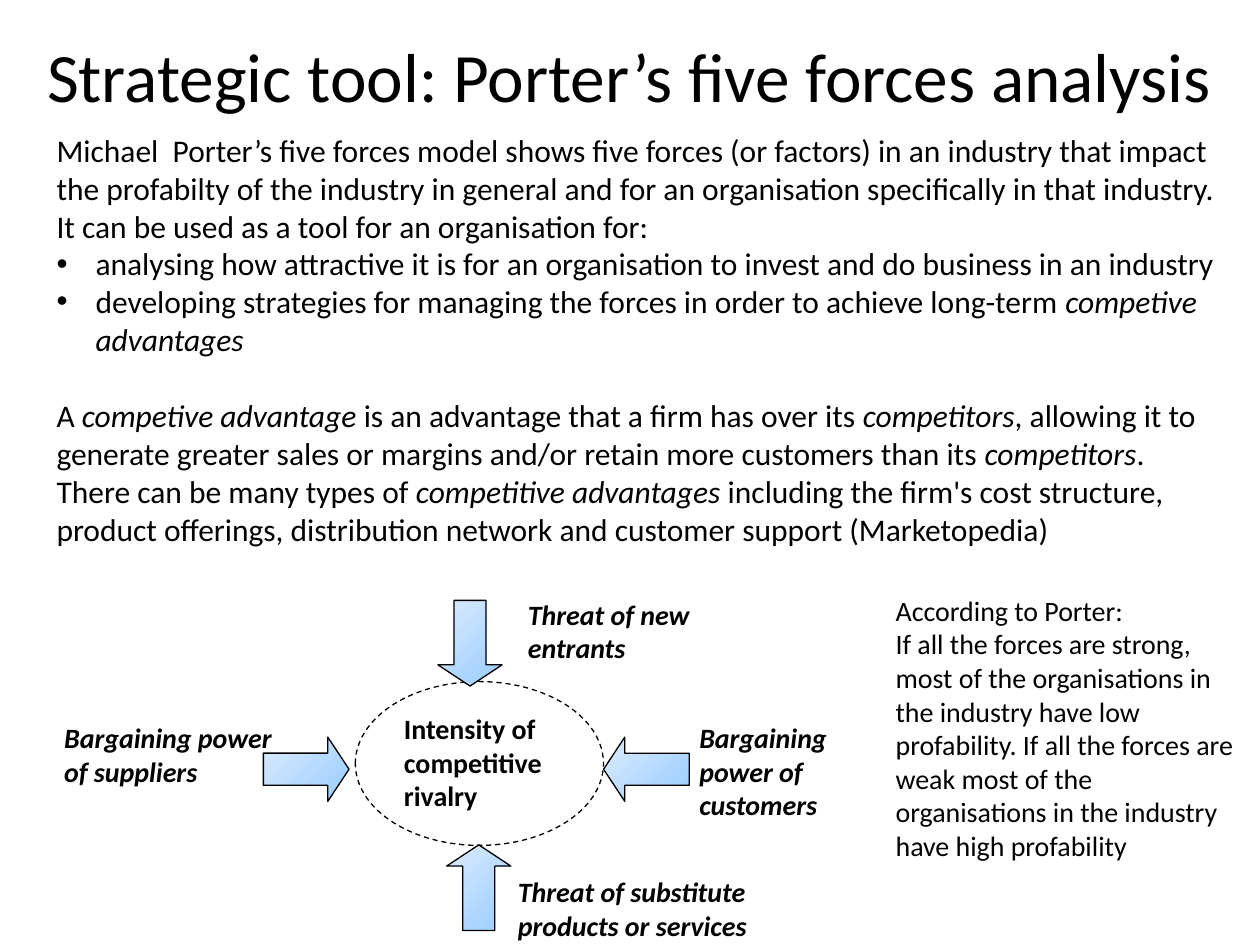
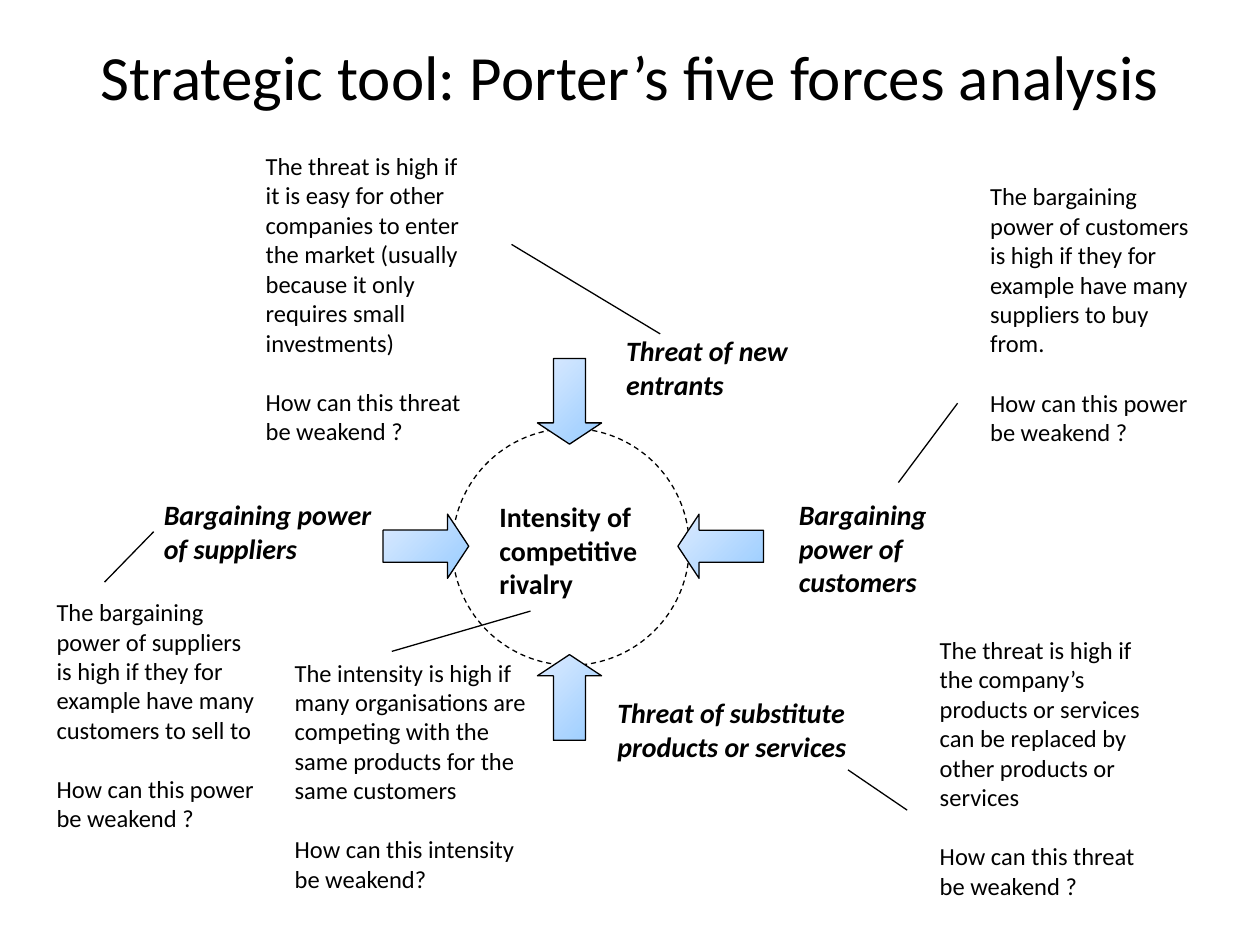
"""Build two slides on the five forces analysis."""
from lxml import etree
from pptx import Presentation
from pptx.dml.color import RGBColor
from pptx.enum.dml import MSO_LINE
from pptx.enum.shapes import MSO_CONNECTOR, MSO_SHAPE
from pptx.enum.text import MSO_ANCHOR, PP_ALIGN
from pptx.oxml.ns import qn
from pptx.util import Inches, Pt

STRAIGHT = MSO_CONNECTOR.STRAIGHT
ELLIPSE, ARROW = MSO_SHAPE.OVAL, MSO_SHAPE.RIGHT_ARROW
DASH = MSO_LINE.DASH
TOP, MIDDLE = MSO_ANCHOR.TOP, MSO_ANCHOR.MIDDLE
LEFT, CENTER = PP_ALIGN.LEFT, PP_ALIGN.CENTER
TITLE_ONLY = 5

BLACK, WHITE = "000000", "FFFFFF"
ARROW_COLOURS = ("DCEBFF", "99CCFF")
FONT = "Calibri"
LINE_HEIGHT = 1.22
LABEL = {"size": Pt(16), "bold": True, "italic": True}
CORE = {"size": Pt(16), "bold": True}
TITLE = "Strategic tool: Porter’s five forces analysis"

FORCES = {
    "suppliers": ("Bargaining power of suppliers", 0, 1.73, 0.85),
    "customers": ("Bargaining power of customers", 180, 1.42, 0.85),
    "entrants": ("Threat of new entrants", 90, 1.44, 0.85),
    "substitutes": ("Threat of substitute products or services", 270, 2.15, 0.51),
}

INTRO = [
    "Michael  Porter’s five forces model shows five forces (or factors) in an industry "
    "that impact the profabilty of the industry in general and for an organisation "
    "specifically in that industry. It can be used as a tool for an organisation for:",
    "• analysing how attractive it is for an organisation to invest and do business in an industry",
    "• developing strategies for managing the forces in order to achieve long-term "
    "*competive advantages*",
    "A *competive advantage *is an advantage that a firm has over its *competitors*, "
    "allowing it to generate greater sales or margins and/or retain more customers than "
    "its *competitors*. There can be many types of *competitive advantages* including the "
    "firm's cost structure, product offerings, distribution network and customer support "
    "(Marketopedia)",
]

CONCLUSION = [
    "According to Porter:",
    "If all the forces are strong, most of the organisations in the industry have low "
    "profability. If all the forces are weak most of the organisations in the industry "
    "have high profability",
]

OVERVIEW_PLACES = {
    "suppliers": ((2.09, 5.85), (0.51, 5.72)),
    "customers": ((4.79, 5.85), (5.55, 5.72)),
    "entrants": ((3.39, 4.85), (4.19, 4.74)),
    "substitutes": ((3.46, 6.79), (4.11, 6.94)),
}

DETAIL_PLACES = {
    "suppliers": ((3.04, 4.08), (1.3, 3.95)),
    "customers": ((5.38, 4.08), (6.34, 3.95)),
    "entrants": ((4.18, 2.93), (4.97, 2.65)),
    "substitutes": ((4.18, 5.28), (4.9, 5.52)),
}

QUESTIONS = [
    ((7.76, 1.39, 1.81, 2.22), (7.13, 3.83, 7.6, 3.2),
     "The bargaining power of customers is high if they for example have many suppliers to buy from.",
     "How can this power be weakend ?"),
    ((0.35, 4.69, 1.81, 1.99), (0.83, 4.62, 1.22, 4.22),
     "The bargaining power of suppliers is high if they for example have many customers to sell to",
     "How can this power be weakend ?"),
    ((7.36, 4.99, 1.81, 2.22), (6.73, 6.11, 7.2, 6.43),
     "The threat is high if the company’s products or services can be replaced by other products or services",
     "How can this threat be weakend ?"),
    ((2.01, 1.15, 1.81, 2.46), (5.24, 2.65, 4.06, 1.94),
     "The threat is high if it is easy for other companies to enter the market "
     "(usually because it only requires small investments)",
     "How can this threat be weakend ?"),
    ((2.24, 5.17, 2.05, 1.99), (3.11, 5.17, 4.21, 4.85),
     "The intensity is high if many organisations are competing with the same products "
     "for the same customers",
     "How can this intensity be weakend?"),
]


def rgb(colour):
    return RGBColor.from_string(colour)


def box(*lengths):
    return [Inches(length) for length in lengths]


class Deck:
    def __init__(self):
        self.prs = Presentation()
        self.prs.slide_width, self.prs.slide_height = box(10, 7.5)
        self.s = None

    def slide(self, left, width, size):
        self.s = self.prs.slides.add_slide(self.prs.slide_layouts[TITLE_ONLY])
        sp = self.s.shapes.title
        sp.left, sp.top, sp.width, sp.height = box(left, -0.03, width, 1.25)
        self.fill_text(sp, [TITLE], {"size": Pt(size)}, align=CENTER, anchor=MIDDLE)

    def fill_text(self, sp, paragraphs, font, align=LEFT, anchor=TOP, gap_before=None, **margins):
        tf = sp.text_frame
        frame = {"word_wrap": True, "vertical_anchor": anchor}
        frame.update({f"margin_{side}": Inches(v) for side, v in margins.items()})
        for name, value in frame.items():
            setattr(tf, name, value)
        for i, text in enumerate(paragraphs):
            p = tf.paragraphs[0] if i == 0 else tf.add_paragraph()
            p.alignment = align
            if i == gap_before:
                p.space_before = Pt(round(font["size"].pt * LINE_HEIGHT))
            if text.startswith("• "):
                self.bullet(p)
                text = text[2:]
            for j, part in enumerate(text.split("*")):
                if not part:
                    continue
                r = p.add_run()
                r.text = part
                r.font.color.rgb = rgb(BLACK)
                for name, value in {"name": FONT, "italic": j % 2 == 1, **font}.items():
                    setattr(r.font, name, value)

    def bullet(self, p):
        pPr = p._p.get_or_add_pPr()
        indent = Inches(0.31)
        pPr.set("marL", str(indent))
        pPr.set("indent", str(-indent))
        etree.SubElement(pPr, qn("a:buFont")).set("typeface", "Arial")
        etree.SubElement(pPr, qn("a:buChar")).set("char", "•")

    def text(self, place, paragraphs, font, **options):
        sp = self.s.shapes.add_textbox(*box(*place))
        self.fill_text(sp, paragraphs, font, **options)

    def shape(self, kind, place):
        sp = self.s.shapes.add_shape(kind, *box(*place))
        sp.shadow.inherit = False
        sp.line.color.rgb = rgb(BLACK)
        sp.line.width = Pt(0.75)
        return sp

    def core(self, place, **margins):
        sp = self.shape(ELLIPSE, place)
        sp.fill.solid()
        sp.fill.fore_color.rgb = rgb(WHITE)
        sp.line.dash_style = DASH
        self.fill_text(sp, ["Intensity of competitive rivalry"], CORE, **margins)

    def arrow(self, left, top, rotation):
        sp = self.shape(ARROW, (left, top, 0.68, 0.51))
        sp.rotation = rotation
        sp.adjustments[1] = 0.33
        sp.fill.gradient()
        sp.fill.gradient_angle = 315
        for stop, colour in zip(sp.fill.gradient_stops, ARROW_COLOURS):
            stop.color.rgb = rgb(colour)
        sp._element.spPr.find(qn("a:gradFill")).set("rotWithShape", "0")

    def forces(self, places):
        for name, (arrow_at, _) in places.items():
            self.arrow(*arrow_at, FORCES[name][1])
        for name, (_, label_at) in places.items():
            label, _, width, height = FORCES[name]
            self.text((*label_at, width, height), [label], LABEL, left=0, top=0, right=0, bottom=0)

    def line(self, ends):
        cxn = self.s.shapes.add_connector(STRAIGHT, *box(*ends))
        cxn.line.color.rgb = rgb(BLACK)
        cxn.line.width = Pt(0.75)
        etree.SubElement(cxn._element.spPr, qn("a:effectLst"))


def overview(deck):
    deck.slide(0.03, 9.93, 39.6)
    deck.text((0.35, 0.99, 9.45, 3.43), INTRO, {"size": Pt(18)}, gap_before=3)
    deck.core((2.82, 5.41, 1.97, 1.3))
    deck.forces(OVERVIEW_PLACES)
    deck.text((7.01, 4.66, 2.95, 2.79), CONCLUSION, {"size": Pt(16)})


def details(deck):
    deck.slide(0.5, 9, 36)
    deck.core((3.59, 3.4, 1.88, 1.88), top=0.29)
    deck.forces(DETAIL_PLACES)
    for place, ends, reason, question in QUESTIONS:
        deck.line(ends)
        deck.text(place, [reason, question], {"size": Pt(14)}, gap_before=1)


def main():
    deck = Deck()
    overview(deck)
    details(deck)
    deck.prs.save("out.pptx")


if __name__ == "__main__":
    main()
